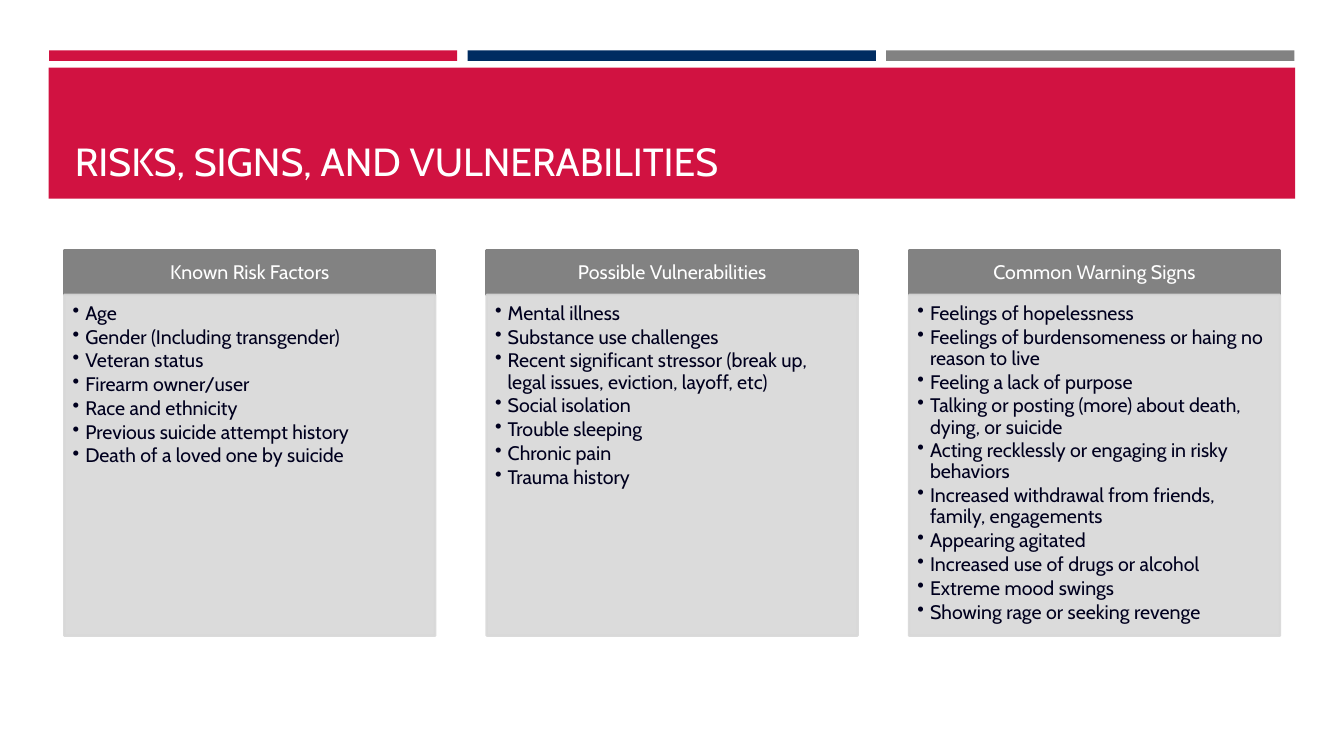
from dataclasses import dataclass

from lxml.etree import SubElement as Sub
from pptx import Presentation
from pptx.dml.color import RGBColor as Rgb
from pptx.enum.shapes import MSO_SHAPE as Shape
from pptx.enum.text import MSO_ANCHOR as Anchor, PP_ALIGN as Align
from pptx.oxml.ns import qn
from pptx.util import Pt

HUES = {
    "red": "D11241", "navy": "002C61", "gray": "828282",
    "pale": "D8D8D8", "ink": "00001E", "white": "FFFFFF",
}
FONT = "Cabin"


@dataclass
class Box:
    left: float
    top: float
    width: float
    height: float


@dataclass
class Card:
    head: str
    items: list[str]


CARDS = [
    Card("Known Risk Factors", [
        "Age",
        "Gender (Including transgender)",
        "Veteran status",
        "Firearm owner/user",
        "Race and ethnicity",
        "Previous suicide attempt history",
        "Death of a loved one by suicide",
    ]),
    Card("Possible Vulnerabilities", [
        "Mental illness",
        "Substance use challenges",
        "Recent significant stressor (break up, legal issues, eviction, layoff, etc)",
        "Social isolation",
        "Trouble sleeping",
        "Chronic pain",
        "Trauma history",
    ]),
    Card("Common Warning Signs", [
        "Feelings of hopelessness",
        "Feelings of burdensomeness or haing no reason to live",
        "Feeling a lack of purpose",
        "Talking or posting (more) about death, dying, or suicide",
        "Acting recklessly or engaging in risky behaviors",
        "Increased withdrawal from friends, family, engagements",
        "Appearing agitated",
        "Increased use of drugs or alcohol",
        "Extreme mood swings",
        "Showing rage or seeking revenge",
    ]),
]


def place(box: Box) -> tuple:
    return Pt(box.left), Pt(box.top), Pt(box.width), Pt(box.height)


def add_rect(slide, box: Box, hue: str, edge: bool = False, alpha: int = 100):
    """Draw a flat rectangle; alpha is the opacity in percent."""
    rect = slide.shapes.add_shape(Shape.RECTANGLE, *place(box))
    rect.shadow.inherit = False
    fills = [rect.fill]
    if edge:
        rect.line.width = Pt(1.75)
        fills.append(rect.line.fill)
    else:
        rect.line.fill.background()
    for fill in fills:
        fill.solid()
        fill.fore_color.rgb = Rgb.from_string(HUES[hue])
    if alpha < 100:
        for tone in rect._element.spPr.iter(qn("a:srgbClr")):
            Sub(tone, qn("a:alpha")).set("val", str(alpha * 1000))
    return rect


def set_frame(shape, anchor: Anchor, pads: tuple):
    """Set wrap, anchor and the left, top, right and bottom insets."""
    frame = shape.text_frame
    frame.word_wrap = True
    frame.vertical_anchor = anchor
    (frame.margin_left, frame.margin_top,
     frame.margin_right, frame.margin_bottom) = map(Pt, pads)
    return frame


def add_run(para, text: str, size: float, hue: str) -> None:
    run = para.add_run()
    run.text = text
    run.font.name = FONT
    run.font.size = Pt(size)
    run.font.color.rgb = Rgb.from_string(HUES[hue])


def add_dot(para) -> None:
    """Give the paragraph a hanging bullet."""
    props = para._p.get_or_add_pPr()
    props.set("marL", str(Pt(9)))
    props.set("indent", str(Pt(-9)))
    Sub(props, qn("a:buChar")).set("char", "•")


def add_banner(slide) -> None:
    for col, hue in enumerate(("red", "navy", "gray")):
        add_rect(slide, Box(35 + col * 299, 36, 291.6, 7.5), hue)
    add_rect(slide, Box(34.8, 48.4, 890.4, 93.6), "red")
    title = slide.shapes.add_textbox(*place(Box(46.4, 55.4, 868, 80)))
    frame = set_frame(title, Anchor.BOTTOM, (7.2, 3.6, 7.2, 3.6))
    add_run(frame.paragraphs[0], "RISKS, SIGNS, AND VULNERABILITIES", 28, "white")


def add_card(slide, card: Card, left: float) -> None:
    head = add_rect(slide, Box(left, 179, 265, 31.7), "gray", True)
    para = set_frame(head, Anchor.MIDDLE, (8, 4, 8, 4)).paragraphs[0]
    para.alignment = Align.CENTER
    para.line_spacing = 0.9
    add_run(para, card.head, 14, "white")

    body = add_rect(slide, Box(left, 210.7, 265, 243.3), "pale", True, 90)
    frame = set_frame(body, Anchor.TOP, (6, 6, 8, 9))
    for row, item in enumerate(card.items):
        para = frame.add_paragraph() if row else frame.paragraphs[0]
        add_dot(para)
        para.alignment = Align.LEFT
        para.line_spacing = 0.9
        para.space_after = Pt(1.85)
        add_run(para, item, 14, "ink")


def main() -> None:
    deck = Presentation()
    deck.slide_width, deck.slide_height = Pt(960), Pt(540)
    slide = deck.slides.add_slide(deck.slide_layouts[6])
    add_banner(slide)
    for col, card in enumerate(CARDS):
        add_card(slide, card, 45.9 + col * 301.7)
    deck.save("out.pptx")


if __name__ == "__main__":
    main()
